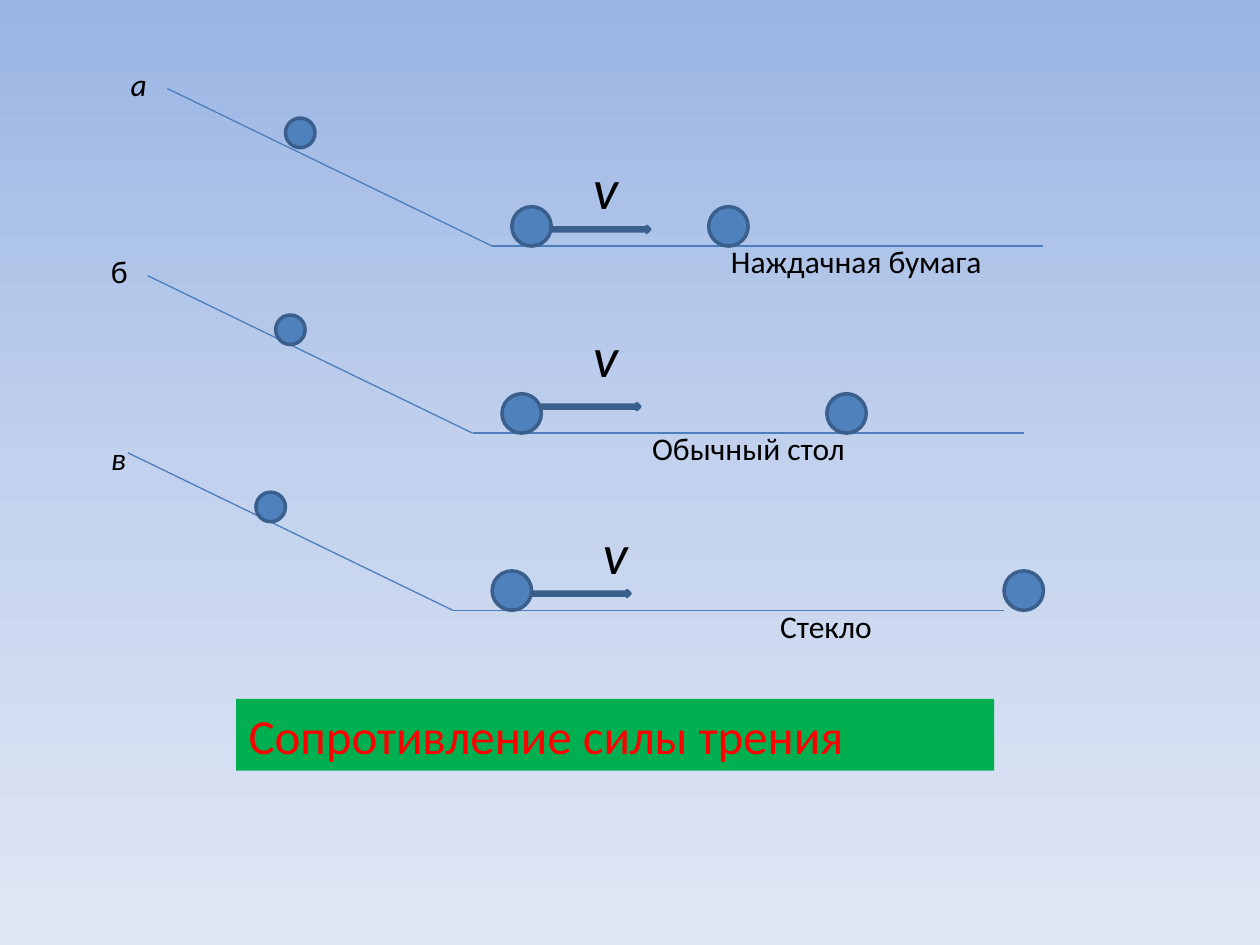
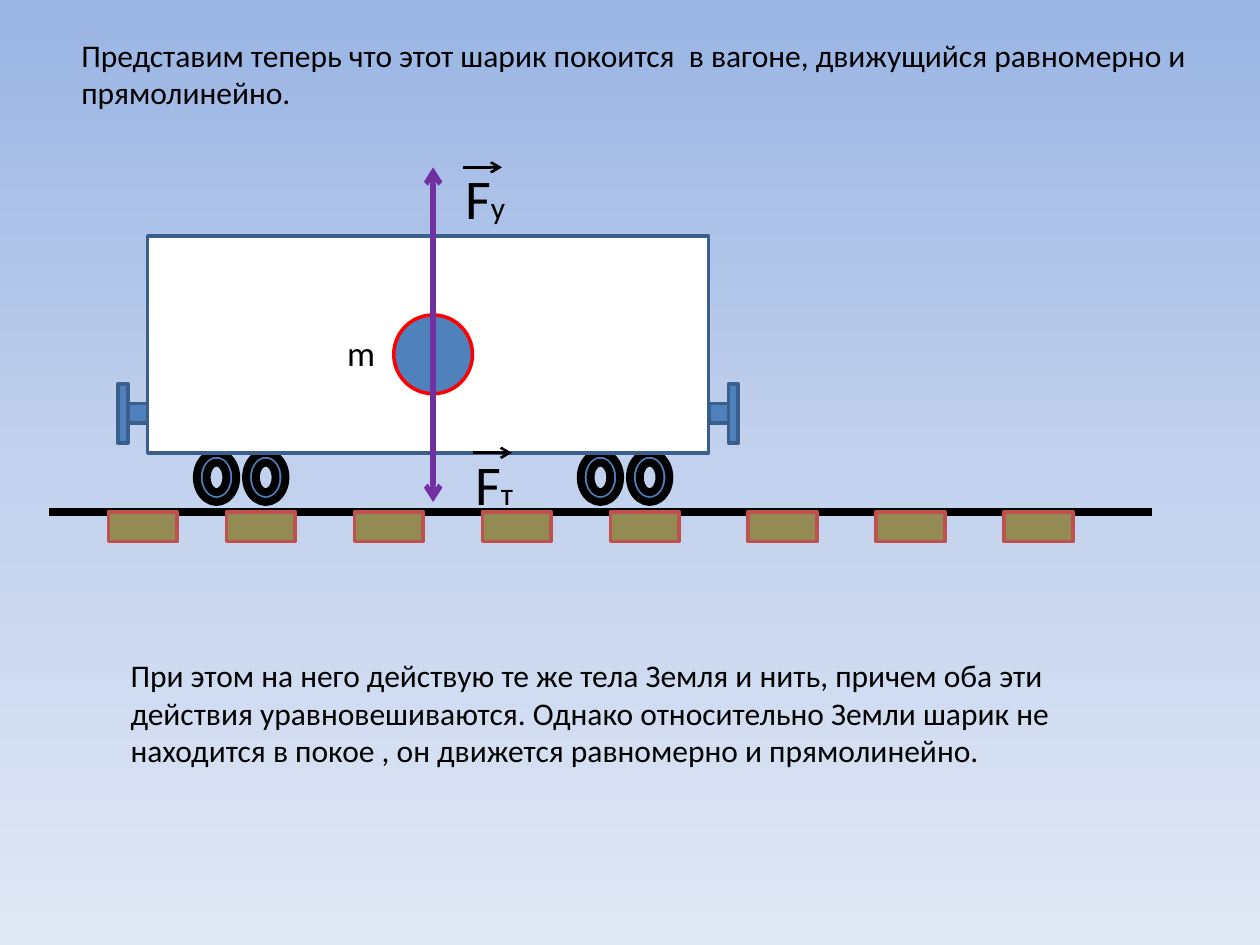
from lxml.etree import SubElement
from pptx import Presentation
from pptx.dml.color import RGBColor
from pptx.enum.shapes import MSO_CONNECTOR, MSO_SHAPE
from pptx.oxml.ns import qn
from pptx.util import Inches, Pt

SLIDE_WIDTH, SLIDE_HEIGHT = Inches(10), Inches(7.5)
COLUMNS = 128
CELL = SLIDE_WIDTH / COLUMNS
FONT = "Calibri"
BLACK, RED, WHITE = "000000", "FF0000", "FFFFFF"
BLUE, NAVY, TRACK_BLUE = "4F81BD", "3A5F8C", "4B7EBC"
GREEN, PURPLE, KHAKI, BRICK = "00B050", "7030A0", "948A54", "C0504D"
SKY = {0: "9AB5E4", 50: "C2D1ED", 100: "E1E8F5"}

RAMP = (33, 16)
TRACK_END = 89
BALL, ROLLING_BALL = 4, 3
EXPERIMENTS = [
    dict(letter="а", italic=True, letter_at=(12, 6), start=(17, 9), rolling=(29, 12),
         moving=52, stopped=72, arrow_row=23, v_at=(59, 15),
         surface="Наждачная бумага", surface_at=(73, 24)),
    dict(letter="б", italic=False, letter_at=(10, 25), start=(15, 28), rolling=(28, 32),
         moving=51, stopped=84, arrow_row=41, v_at=(59, 32),
         surface="Обычный стол", surface_at=(65, 43)),
    dict(letter="в", italic=True, letter_at=(10, 44), start=(13, 46), rolling=(26, 50),
         moving=50, stopped=102, arrow_row=60, v_at=(60, 52),
         surface="Стекло", surface_at=(78, 61)),
]
RAIL_ROW = 52
SLEEPERS = (11, 23, 36, 49, 62, 76, 89, 102)
WHEELS = (20, 25, 59, 64)
BUFFERS = ((12, 13), (74, 72))


def grid(*cells):
    """Turn grid cells into lengths."""
    return [round(cell * CELL) for cell in cells]


def rgb(color):
    """Turn a hex string into a colour."""
    return RGBColor.from_string(color)


def paint_background(master):
    """Give every slide the vertical sky gradient."""
    fill = master.background.fill
    fill.gradient()
    fill.gradient_angle = 270
    stops = next(master.background.element.iter(qn("a:gsLst"))) if hasattr(
        master.background, "element") else next(master.element.iter(qn("a:gsLst")))
    for stop in list(stops):
        stops.remove(stop)
    for share, color in SKY.items():
        stop = SubElement(stops, qn("a:gs"), pos=str(share * 1000))
        SubElement(stop, qn("a:srgbClr"), val=color)


def add_figure(slide, kind, at, fill=BLUE, outline=NAVY, weight=2):
    """Draw a filled, outlined preset shape on the grid."""
    figure = slide.shapes.add_shape(kind, *grid(*at))
    figure.shadow.inherit = False
    figure.fill.solid()
    figure.fill.fore_color.rgb = rgb(fill)
    figure.line.color.rgb = rgb(outline)
    figure.line.width = Pt(weight)


def add_ball(slide, column, row, size=BALL, outline=NAVY):
    """Draw a round ball."""
    add_figure(slide, MSO_SHAPE.OVAL, (column, row, size, size), outline=outline)


def add_line(slide, start, end, color, weight, arrow=False):
    """Draw a straight line, with an open arrowhead if asked."""
    line = slide.shapes.add_connector(MSO_CONNECTOR.STRAIGHT, *grid(*start, *end))
    line.line.color.rgb = rgb(color)
    line.line.width = Pt(weight)
    if arrow:
        SubElement(line.line._get_or_add_ln(), qn("a:tailEnd"), type="arrow")
    SubElement(line.element.spPr, qn("a:effectLst"))


def add_text(slide, at, *pieces, color=BLACK, italic=False, fill=None):
    """Write one paragraph from (text, size) pieces."""
    box = slide.shapes.add_textbox(*grid(*at))
    box.text_frame.word_wrap = True
    if fill:
        box.fill.solid()
        box.fill.fore_color.rgb = rgb(fill)
    for text, size in pieces:
        run = box.text_frame.paragraphs[0].add_run()
        run.text = text
        run.font.color.rgb = rgb(color)
        for name, value in dict(name=FONT, size=Pt(size), italic=italic).items():
            setattr(run.font, name, value)


def add_experiment(slide, letter, italic, letter_at, start, rolling, moving, stopped,
                   arrow_row, v_at, surface, surface_at):
    """Draw a ramp, its track and the ball rolling, moving and stopped."""
    column, row = start
    foot = (column + RAMP[0], row + RAMP[1])
    add_line(slide, start, foot, TRACK_BLUE, 0.75)
    add_line(slide, foot, (column + TRACK_END, foot[1]), TRACK_BLUE, 0.75)
    add_ball(slide, *rolling, size=ROLLING_BALL)
    for ball_column in (moving, stopped):
        add_ball(slide, ball_column, foot[1] - BALL)
    add_figure(slide, MSO_SHAPE.RIGHT_ARROW, (moving + BALL, arrow_row, 10, 0.6))
    add_text(slide, (*letter_at, 4.3, 5), (letter, 18), italic=italic)
    add_text(slide, (*v_at, 5, 8), ("v", 32), italic=True)
    add_text(slide, (*surface_at, 37, 5), (surface, 18))


def add_force(slide, end_row, index, label_at, vector_at):
    """Draw a force from the ball's centre and its label with a vector sign."""
    add_line(slide, (44, 35), (44, end_row), PURPLE, 3, arrow=True)
    add_text(slide, (*label_at, 9, 8), ("F", 32), (index, 18))
    column, row = vector_at
    add_line(slide, vector_at, (column + 4, row), BLACK, 1.5, arrow=True)


def add_wagon(slide):
    """Draw the rail, sleepers, wheels, body and buffers."""
    add_line(slide, (5, RAIL_ROW), (117, RAIL_ROW), BLACK, 4.5)
    for column in SLEEPERS:
        add_figure(slide, MSO_SHAPE.RECTANGLE, (column, RAIL_ROW, 7, 3), KHAKI, BRICK)
    for column in WHEELS:
        add_figure(slide, MSO_SHAPE.DONUT, (column, 46, 4, 5), outline=BLACK, weight=4.5)
    add_figure(slide, MSO_SHAPE.RECTANGLE, (15, 24, 57, 22), WHITE)
    for plate, rod in BUFFERS:
        add_figure(slide, MSO_SHAPE.RECTANGLE, (plate, 39, 1, 6))
        add_figure(slide, MSO_SHAPE.RECTANGLE, (rod, 41, 2, 2))


def build_friction(slide):
    """Compare how far the ball rolls on three surfaces."""
    for experiment in EXPERIMENTS:
        add_experiment(slide, **experiment)
    add_text(slide, (24, 71, 77, 7.3), ("Сопротивление силы трения", 28),
             color=RED, fill=GREEN)


def build_wagon(slide):
    """Show the balanced forces on a ball in a moving wagon."""
    add_wagon(slide)
    add_ball(slide, 40, 32, size=8, outline=RED)
    add_text(slide, (34, 33, 5, 5.6), ("m", 20))
    add_force(slide, 17, "у", (46, 16), (47, 17))
    add_force(slide, 51, "т", (47, 45), (48, 46))
    add_text(slide, (7, 3, 117, 9),
             ("Представим теперь что этот шарик покоится  в вагоне, движущийся "
              "равномерно и прямолинейно.", 18))
    add_text(slide, (12, 66, 103, 13),
             ("При этом на него действую те же тела Земля и нить, причем оба эти "
              "действия уравновешиваются. Однако относительно Земли шарик не "
              "находится в покое , он движется равномерно и прямолинейно.", 18))


def main():
    """Build both slides and save them."""
    deck = Presentation()
    deck.slide_width, deck.slide_height = SLIDE_WIDTH, SLIDE_HEIGHT
    paint_background(deck.slide_master)
    blank = deck.slide_layouts.get_by_name("Blank")
    for build in (build_friction, build_wagon):
        build(deck.slides.add_slide(blank))
    deck.save("out.pptx")


if __name__ == "__main__":
    main()
